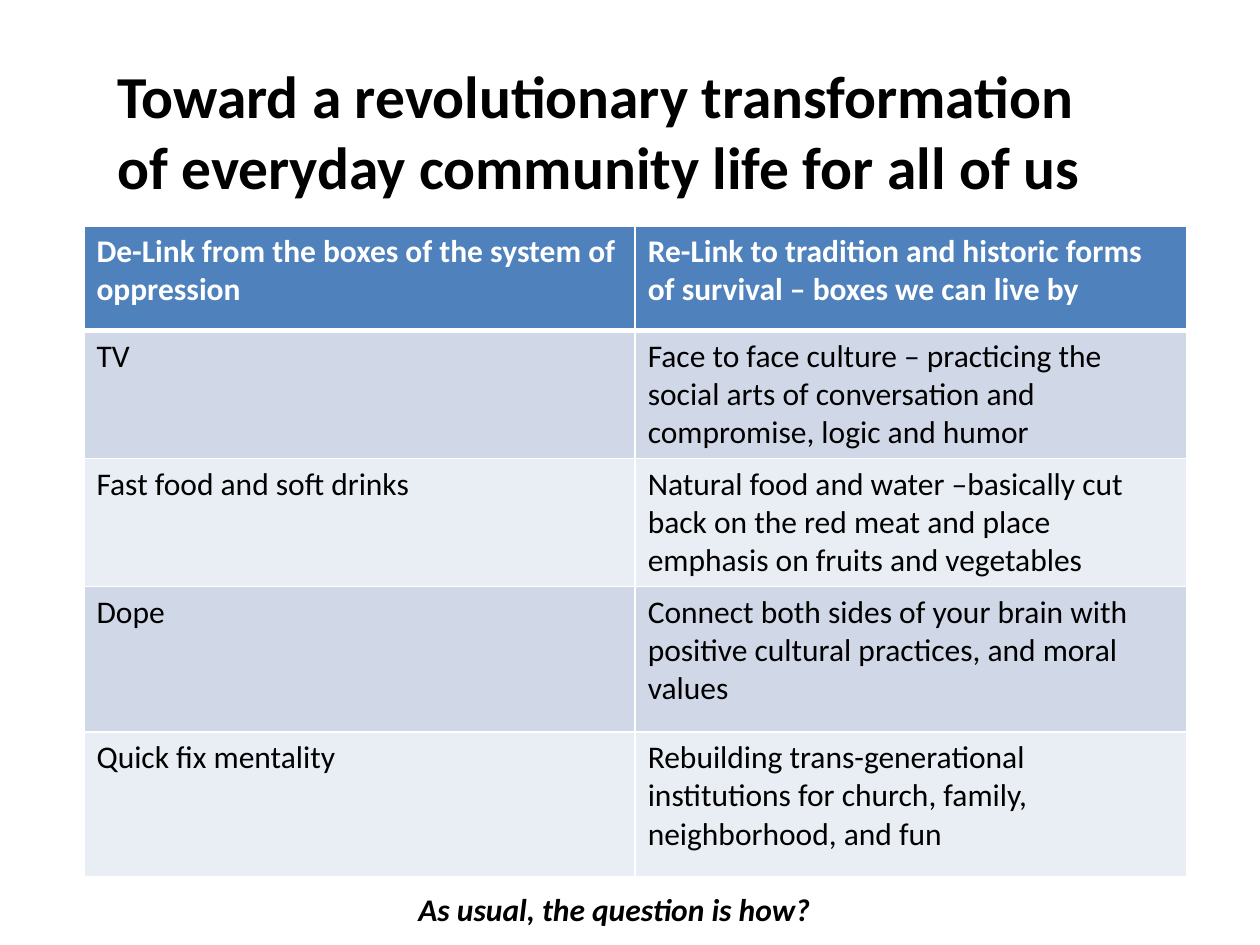
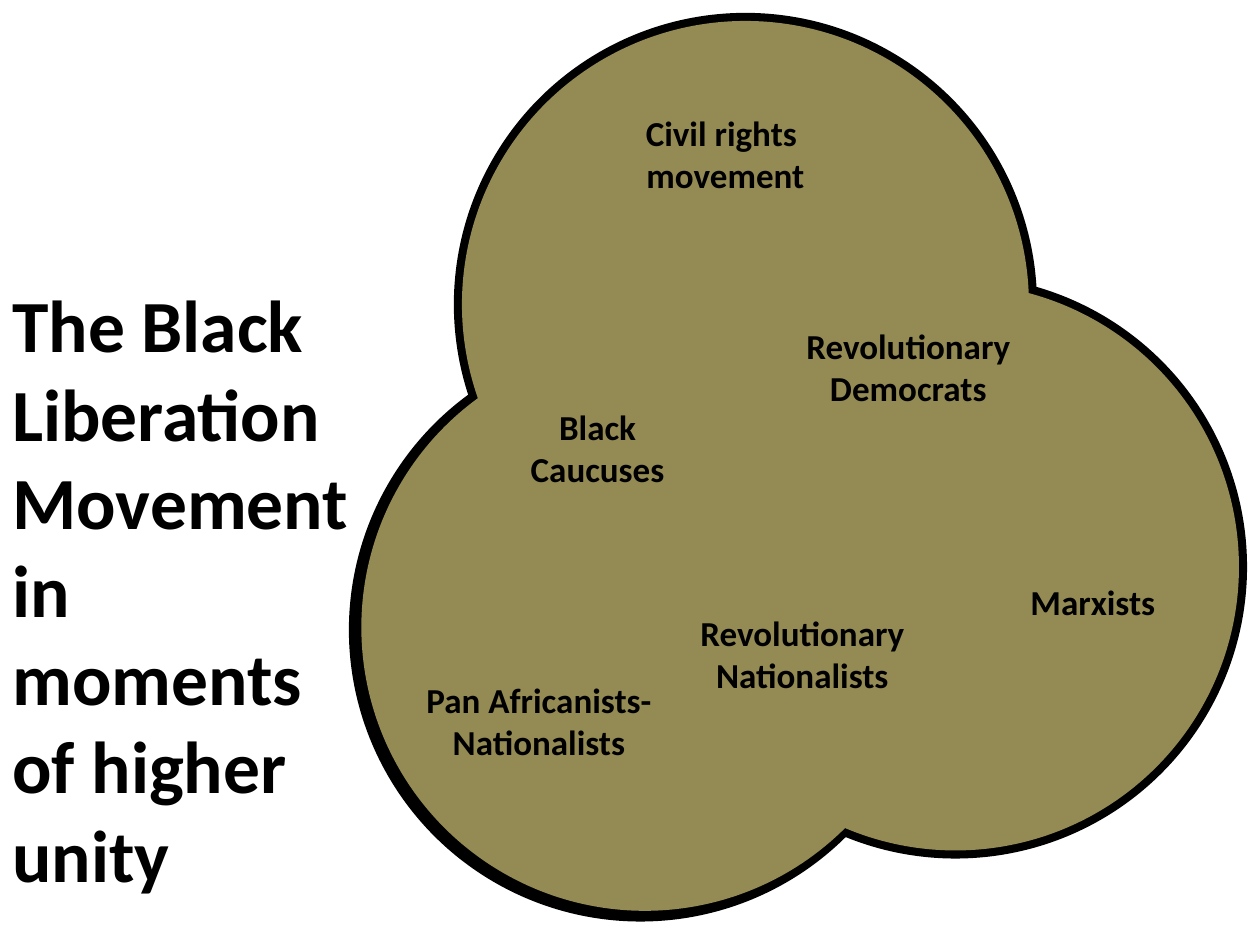
from dataclasses import dataclass

from lxml import etree
from pptx import Presentation
from pptx.dml.color import RGBColor
from pptx.enum.shapes import MSO_SHAPE
from pptx.enum.text import MSO_ANCHOR, PP_ALIGN
from pptx.oxml.ns import qn
from pptx.util import Pt

OVAL = MSO_SHAPE.OVAL
LEFT, CENTER = PP_ALIGN.LEFT, PP_ALIGN.CENTER
BOTTOM = MSO_ANCHOR.BOTTOM


@dataclass(frozen=True)
class Theme:
    font: str = "Calibri"
    black: str = "000000"
    white: str = "FFFFFF"
    head: str = "4F81BD"
    bands: tuple = ("D0D8E8", "E9EDF4")
    olive: str = "948A54"
    title: int = 34
    side: int = 42
    label: int = 20
    body: int = 18
    edge: float = 9.25


theme = Theme()


def write(frame, paras, size, color=theme.black, bold=True, italic=False, align=LEFT):
    """Fill a text frame; a newline inside a paragraph becomes a line break."""
    frame.word_wrap = True
    for i, text in enumerate(paras):
        para = frame.add_paragraph() if i else frame.paragraphs[0]
        para.alignment = align
        for j, line in enumerate(text.split("\n")):
            if j:
                para.add_line_break()
            run = para.add_run()
            run.text = line
            font = run.font
            font.name, font.size = theme.font, Pt(size)
            font.bold, font.italic = bold, italic
            font.color.rgb = RGBColor.from_string(color)


def add_text(slide, box, paras, size, **style):
    frame = slide.shapes.add_textbox(*map(Pt, box)).text_frame
    write(frame, paras, size, **style)
    return frame


deck = Presentation()
deck.slide_width, deck.slide_height = Pt(720), Pt(540)
blank = deck.slide_layouts[6]

# Slide 1: what to leave and what to take up
slide = deck.slides.add_slide(blank)
rows = [
    ("De-Link from the boxes of the system of oppression",
     "Re-Link to tradition and historic forms of survival – boxes we can live by"),
    ("TV",
     "Face to face culture – practicing the social arts of conversation "
     "and compromise, logic and humor"),
    ("Fast food and soft drinks",
     "Natural food and water –basically cut back on the red meat and place "
     "emphasis on fruits and vegetables"),
    ("Dope",
     "Connect both sides of your brain with positive cultural practices, "
     "and moral values"),
    ("Quick fix mentality",
     "Rebuilding trans-generational institutions for church, family, "
     "neighborhood, and fun"),
]
heights = [60, 60, 60, 83, 83]
table = slide.shapes.add_table(
    len(rows), 2, Pt(48), Pt(129), Pt(630), Pt(sum(heights))).table
for r, (texts, height) in enumerate(zip(rows, heights)):
    table.rows[r].height = Pt(height)
    head = r == 0
    fill = theme.head if head else theme.bands[(r - 1) % 2]
    for c, text in enumerate(texts):
        cell = table.cell(r, c)
        write(cell.text_frame, [text], theme.body,
              color=theme.white if head else theme.black, bold=head)
        props = cell._tc.get_or_add_tcPr()
        for side in ("lnL", "lnR", "lnT", "lnB"):
            thick = (r, side) in ((0, "lnB"), (1, "lnT"))
            line = etree.SubElement(props, qn("a:" + side), w=str(Pt(3 if thick else 1)))
            solid = etree.SubElement(line, qn("a:solidFill"))
            etree.SubElement(solid, qn("a:srgbClr"), val=theme.white)
        cell.fill.solid()
        cell.fill.fore_color.rgb = RGBColor.from_string(fill)

add_text(slide, (60, 30, 577, 90),
         ["Toward a revolutionary transformation",
          "of everyday community life for all of us"], theme.title)
add_text(slide, (232, 505, 242, 29), ["As usual, the question is how?"],
         theme.body, italic=True)

# Slide 2: three circles merged into one outline
slide = deck.slides.add_slide(blank)
side = add_text(slide, (0, 0, 288, 516),
                ["The Black Liberation", "Movement", "in \nmoments", "of higher", "unity"],
                theme.side)
side.vertical_anchor = BOTTOM

rings = [(264, 12), (204, 198), (384, 162)]
discs = [(264, 12), (206.5, 196.5), (384, 162)]
for spots, outline in ((rings, True), (discs, False)):
    for x, y in spots:
        oval = slide.shapes.add_shape(OVAL, Pt(x), Pt(y), Pt(324), Pt(324))
        oval.shadow.inherit = False
        if outline:
            oval.fill.background()
            oval.line.color.rgb = RGBColor.from_string(theme.black)
            oval.line.width = Pt(theme.edge)
        else:
            oval.fill.solid()
            oval.fill.fore_color.rgb = RGBColor.from_string(theme.olive)
            oval.line.fill.background()

labels = [
    ((297, 60, 235, 55), ["Civil rights \nmovement"]),
    ((570, 328, 109, 32), ["Marxists"]),
    ((340, 346, 237, 55), ["Revolutionary", "Nationalists"]),
    ((234, 384, 148, 55), ["Pan Africanists-Nationalists"]),
    ((261, 228, 161, 55), ["Black", "Caucuses"]),
    ((446, 182, 146, 55), ["Revolutionary Democrats"]),
]
for box, paras in labels:
    add_text(slide, box, paras, theme.label, align=CENTER)

deck.save("out.pptx")
